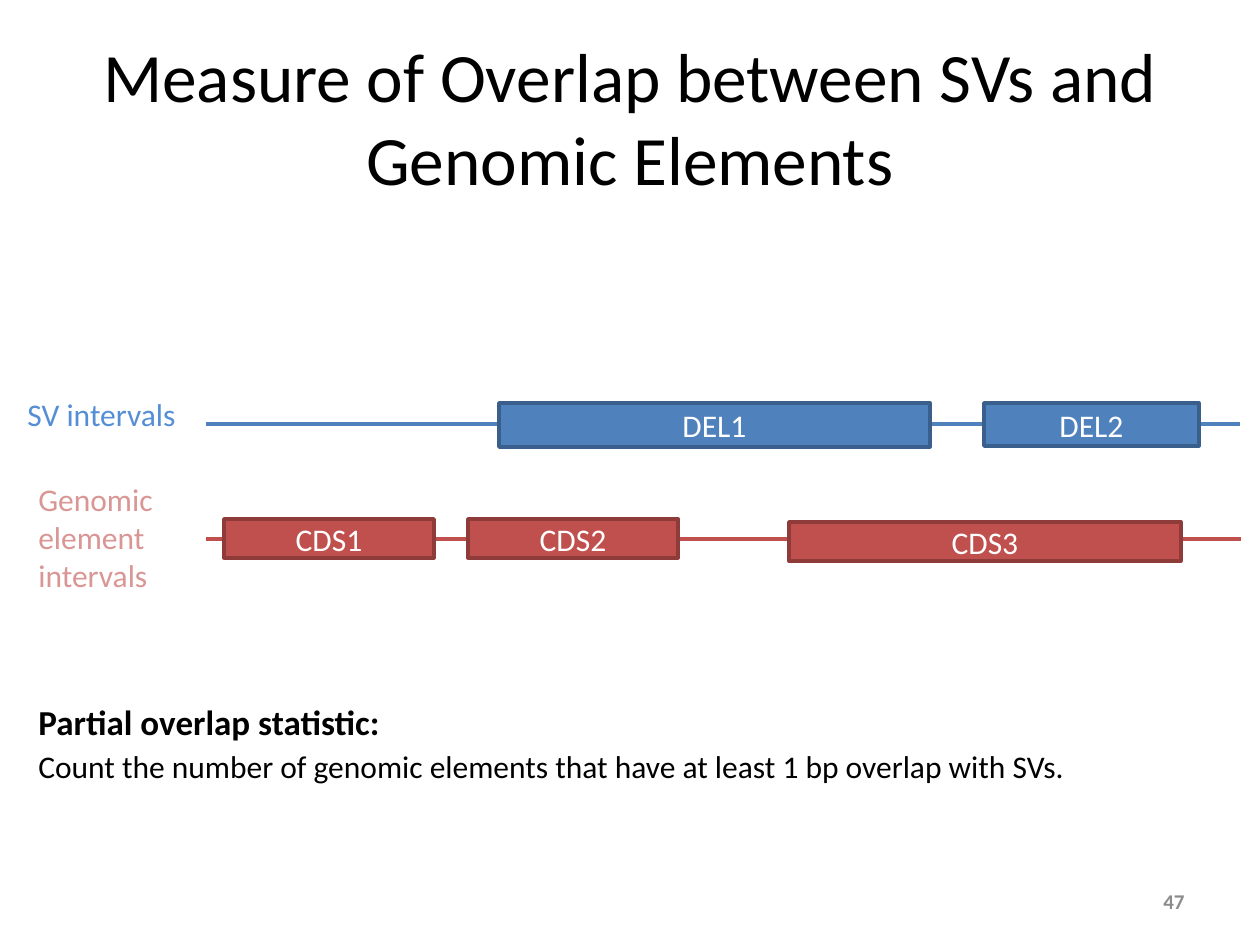
from pptx import Presentation, util as u
from pptx.dml.color import RGBColor
from pptx.enum import shapes, text
from pptx.oxml.ns import qn
from lxml import etree

BLUE, RED = "4F81BD", "C0504D"
BLUE_EDGE, RED_EDGE = "3A5F8C", "8E3B39"


def px(*lengths):
    return [u.Inches(length / 126) for length in lengths]


def add_run(para, words, size, color, bold=False):
    span = para.add_run()
    span.text = words
    span.font.name = "Calibri"
    span.font.size = u.Pt(size)
    span.font.bold = bold
    span.font.color.rgb = RGBColor.from_string(color)


deck = Presentation()
deck.slide_width, deck.slide_height = px(1260, 945)
page = deck.slides.add_slide(deck.slide_layouts[5])

# Title
title = page.shapes.title
title.left, title.top, title.width, title.height = px(63, 38, 1134, 157)
title.text_frame.vertical_anchor = text.MSO_ANCHOR.MIDDLE
title.text_frame.auto_size = text.MSO_AUTO_SIZE.NONE
para = title.text_frame.paragraphs[0]
para.alignment = text.PP_ALIGN.CENTER
add_run(para, "Measure of Overlap between SVs and Genomic Elements", 39.6, "000000")

# Track lines
for right, y, color in [(1240, 424, BLUE), (1241, 539, RED)]:
    track = page.shapes.add_connector(
        shapes.MSO_CONNECTOR.STRAIGHT, *px(206, y, right, y))
    track.line.color.rgb = RGBColor.from_string(color)
    track.line.width = u.Pt(2)
    etree.SubElement(track._element.spPr, qn("a:effectLst"))

# Intervals on the tracks
intervals = [
    ("DEL1", 499, 403, 431, 44, BLUE, BLUE_EDGE),
    ("DEL2", 984, 403, 215, 43, BLUE, BLUE_EDGE),
    ("CDS1", 224, 519, 210, 39, RED, RED_EDGE),
    ("CDS2", 468, 519, 210, 39, RED, RED_EDGE),
    ("CDS3", 789, 522, 392, 39, RED, RED_EDGE),
]
for name, left, top, width, height, fill, edge in intervals:
    box = page.shapes.add_shape(
        shapes.MSO_SHAPE.RECTANGLE, *px(left, top, width, height))
    box.shadow.inherit = False
    box.fill.solid()
    box.fill.fore_color.rgb = RGBColor.from_string(fill)
    box.line.color.rgb = RGBColor.from_string(edge)
    box.line.width = u.Pt(2)
    box.text_frame.vertical_anchor = text.MSO_ANCHOR.MIDDLE
    para = box.text_frame.paragraphs[0]
    para.alignment = text.PP_ALIGN.CENTER
    add_run(para, name, 18, "FFFFFF")

# Track labels, statistic and its explanation
labels = [
    (["SV intervals"], 15, 389, 176, 50, 18, "558ED5", False, False),
    (["Genomic element", "intervals"], 26, 474, 176, 127, 18, "D99694", False, True),
    (["Partial overlap statistic:"], 26, 694, 372, 55, 20, "000000", True, False),
    (["Count the number of genomic elements that have at least 1 bp overlap with SVs."],
     26, 741, 1084, 50, 18, "000000", False, False),
]
for lines, left, top, width, height, size, color, bold, wrap in labels:
    box = page.shapes.add_textbox(*px(left, top, width, height))
    frame = box.text_frame
    frame.word_wrap = wrap
    frame.auto_size = text.MSO_AUTO_SIZE.SHAPE_TO_FIT_TEXT
    for index, line in enumerate(lines):
        para = frame.add_paragraph() if index else frame.paragraphs[0]
        add_run(para, line, size, color, bold)

# Page number
number = page.shapes.add_textbox(*px(903, 876, 294, 50))
number.text_frame.word_wrap = True
number.text_frame.vertical_anchor = text.MSO_ANCHOR.MIDDLE
para = number.text_frame.paragraphs[0]
para.alignment = text.PP_ALIGN.RIGHT
add_run(para, "47", 12, "8C8C8C", True)

deck.save("out.pptx")
